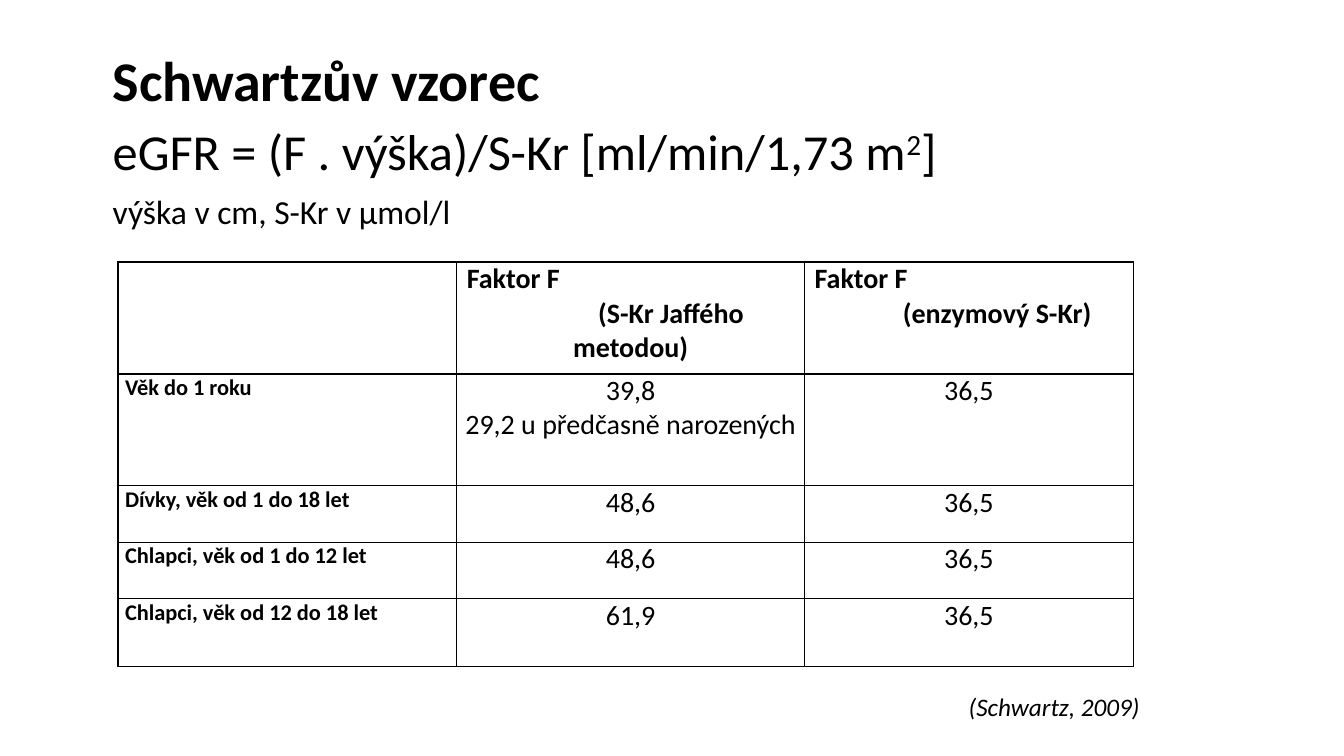
from lxml.etree import SubElement
from pptx import Presentation
from pptx.dml.color import RGBColor
from pptx.enum.text import MSO_ANCHOR, PP_ALIGN
from pptx.oxml.ns import qn
from pptx.util import Inches, Pt

COLORS = {"text": "000000", "border": "000000"}
FONT = "Calibri"
LEFT, CENTER = PP_ALIGN.LEFT, PP_ALIGN.CENTER

TITLE = "Schwartzův vzorec"
FORMULA = ["eGFR = (F . výška)/S-Kr [ml/min/1,73 m", "2", "]"]
UNITS = "výška v cm, S-Kr v µmol/l"
CITATION = "(Schwartz, 2009)"

HEADERS = [
    [],
    [("Faktor F", LEFT, 0.03), ("(S-Kr Jaffého", CENTER, 0.8), ("metodou)", CENTER, 0)],
    [("Faktor F", LEFT, 0.03), ("(enzymový S-Kr)", CENTER, 0.56)],
]
FACTORS = [
    ("Věk do 1 roku", ["39,8", "29,2 u předčasně narozených"], ["36,5"]),
    ("Dívky, věk od 1 do 18 let", ["48,6"], ["36,5"]),
    ("Chlapci, věk od 1 do 12 let", ["48,6"], ["36,5"]),
    ("Chlapci, věk od 12 do 18 let", ["61,9"], ["36,5"]),
]
COLUMN_WIDTHS = [3.36, 3.45, 3.26]
ROW_HEIGHTS = [1.11, 1.11, 0.56, 0.56, 0.67]


def add_run(paragraph, text, size, bold=False, italic=False):
    run = paragraph.add_run()
    run.text = text
    font = run.font
    font.name, font.size, font.bold, font.italic = FONT, Pt(size), bold, italic
    font.color.rgb = RGBColor.from_string(COLORS["text"])
    return run


def add_text_frame(slide, left, top, width, height):
    box = slide.shapes.add_textbox(Inches(left), Inches(top), Inches(width), Inches(height))
    box.text_frame.word_wrap = True
    return box.text_frame


def fill_cell(cell, lines, size, bold):
    cell.fill.background()
    cell.margin_left = cell.margin_right = Inches(0.07)
    cell.margin_top = cell.margin_bottom = 0
    for index, (text, alignment, indent) in enumerate(lines):
        frame = cell.text_frame
        paragraph = frame.add_paragraph() if index else frame.paragraphs[0]
        paragraph.alignment = alignment
        paragraph._p.get_or_add_pPr().set("marL", str(Inches(indent)))
        add_run(paragraph, text, size, bold)


def add_borders(cell):
    properties = cell._tc.get_or_add_tcPr()
    for index, side in enumerate(("lnL", "lnR", "lnT", "lnB")):
        line = SubElement(properties, qn(f"a:{side}"), w=str(Pt(1)))
        fill = SubElement(line, qn("a:solidFill"))
        SubElement(fill, qn("a:srgbClr"), val=COLORS["border"])
        properties.insert(index, line)


def add_factor_table(slide):
    rows = [HEADERS]
    for label, *values in FACTORS:
        rows.append([[(label, LEFT, 0)]] + [[(text, CENTER, 0) for text in value] for value in values])
    table = slide.shapes.add_table(
        len(rows), len(COLUMN_WIDTHS), Inches(1.17), Inches(2.6),
        Inches(sum(COLUMN_WIDTHS)), Inches(sum(ROW_HEIGHTS)),
    ).table
    table.first_row = table.horz_banding = False
    for column, width in zip(table.columns, COLUMN_WIDTHS):
        column.width = Inches(width)
    for row_index, row in enumerate(rows):
        table.rows[row_index].height = Inches(ROW_HEIGHTS[row_index])
        for column_index, lines in enumerate(row):
            cell = table.cell(row_index, column_index)
            is_label = row_index > 0 and column_index == 0
            fill_cell(cell, lines, 16 if is_label else 20, is_label or row_index == 0)
            add_borders(cell)


def main():
    presentation = Presentation()
    presentation.slide_width, presentation.slide_height = Inches(13.33), Inches(7.5)
    slide = presentation.slides.add_slide(presentation.slide_layouts[6])

    title = add_text_frame(slide, 1.02, 0.28, 11.05, 1.1)
    title.vertical_anchor = MSO_ANCHOR.MIDDLE
    title.paragraphs[0].line_spacing = 0.9
    add_run(title.paragraphs[0], TITLE, 40, bold=True)

    body = add_text_frame(slide, 1.02, 1.21, 9.04, 1.45)
    formula, units = body.paragraphs[0], body.add_paragraph()
    for paragraph in (formula, units):
        paragraph.line_spacing = 0.9
        paragraph.space_before = Pt(10)
    formula_runs = [add_run(formula, text, 36) for text in FORMULA]
    formula_runs[1].font._element.set("baseline", "30000")
    add_run(units, UNITS, 24)

    add_factor_table(slide)

    citation = add_text_frame(slide, 9.51, 6.81, 2.4, 0.4)
    add_run(citation.paragraphs[0], CITATION, 18, italic=True)

    presentation.save("out.pptx")


if __name__ == "__main__":
    main()
